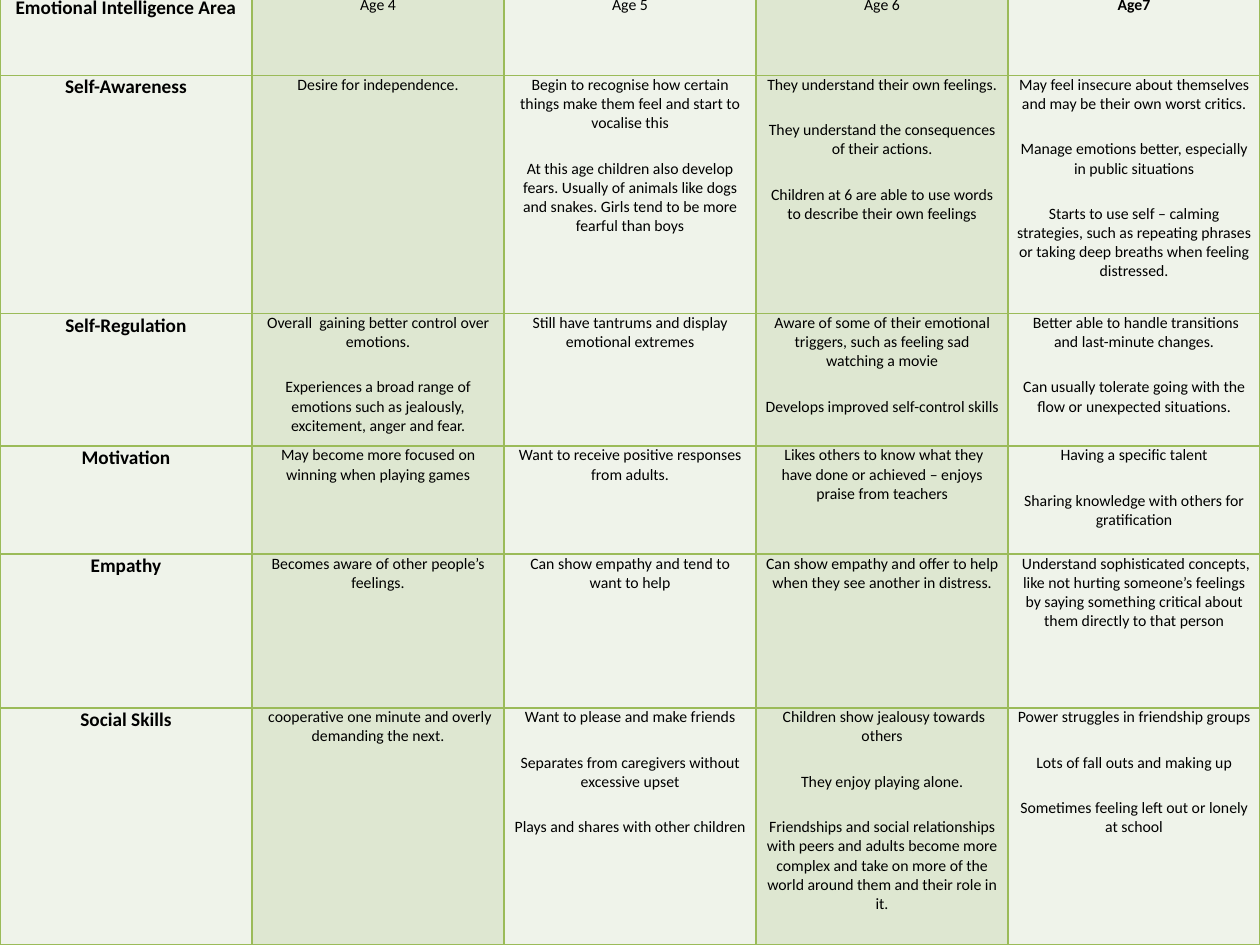
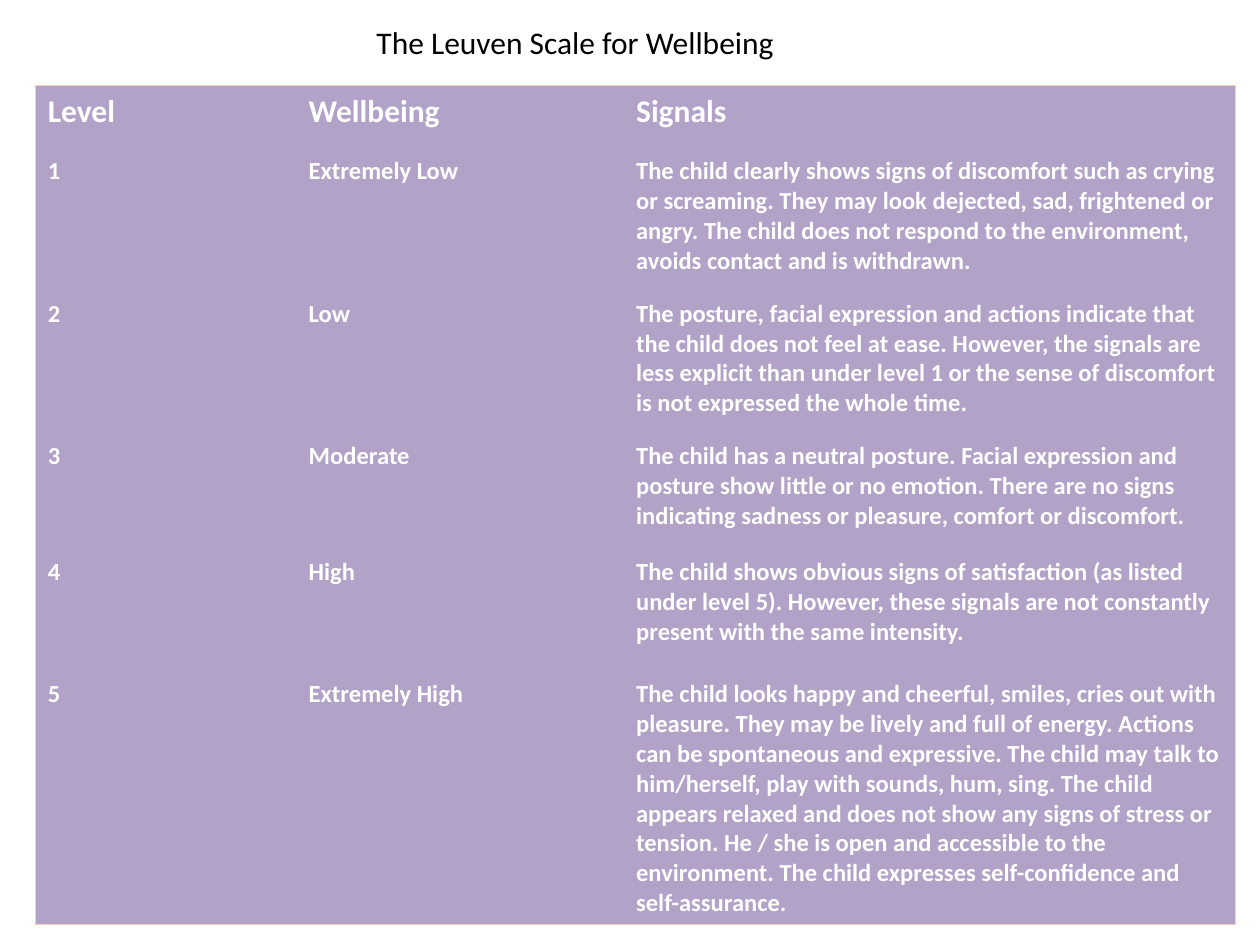
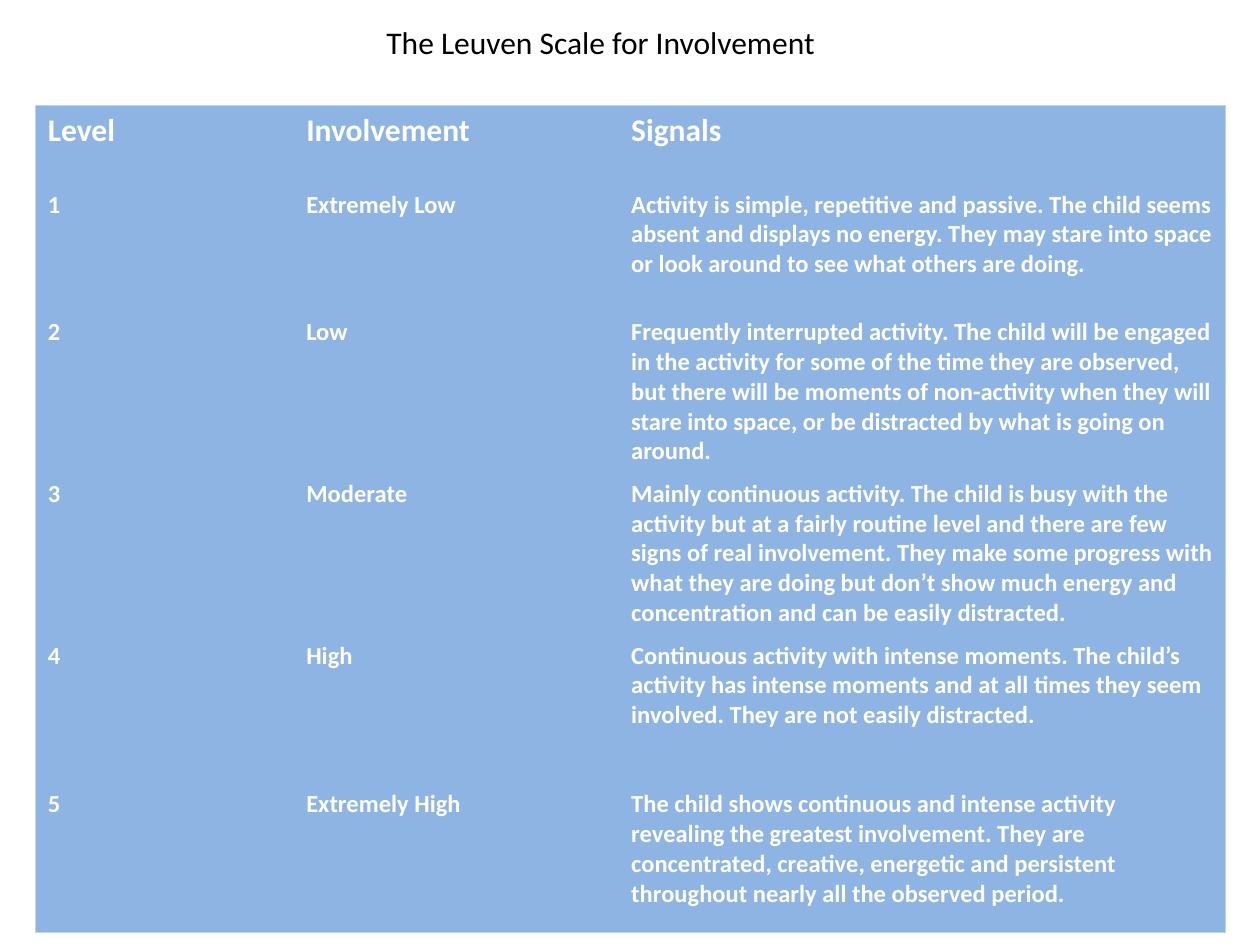
import pptx
import pptx.dml.color
import pptx.enum.text
import pptx.util
import lxml.etree
from pptx.oxml.ns import qn

Cm = pptx.util.Cm
Pt = pptx.util.Pt

COLORS = {
    "text": "000000",
    "white": "FFFFFF",
    "age_line": "9BBB59",
    "age_light": "EFF3EA",
    "age_dark": "DEE7D1",
    "wellbeing": "B3A2C7",
    "wellbeing_line": "F7CEBB",
    "involvement": "8EB4E3",
    "involvement_line": "BCD7E1",
}
FONT = "Calibri"
PLAIN_TABLE = "{2D5ABB26-0587-4C30-8999-92F81FD0307C}"
SIDES = ("lnL", "lnR", "lnT", "lnB")
LEVELS = ["Extremely Low", "Low", "Moderate", "High", "Extremely High"]

AGES = [
    [["Emotional Intelligence Area"], ["Age 4"], ["Age 5"], ["Age 6"], ["Age7"]],
    [
        ["Self-Awareness"],
        ["Desire for independence."],
        ["Begin to recognise how certain things make them feel and start to vocalise this",
         "At this age children also develop fears. Usually of animals like dogs and snakes. "
         "Girls tend to be more fearful than boys"],
        ["They understand their own feelings.",
         "They understand the consequences of their actions.",
         "Children at 6 are able to use words to describe their own feelings"],
        ["May feel insecure about themselves and may be their own worst critics.",
         "Manage emotions better, especially in public situations",
         "Starts to use self – calming strategies, such as repeating phrases or taking "
         "deep breaths when feeling distressed."],
    ],
    [
        ["Self-Regulation"],
        ["Overall  gaining better control over emotions.",
         "Experiences a broad range of emotions such as jealously, excitement, anger and fear."],
        ["Still have tantrums and display emotional extremes"],
        ["Aware of some of their emotional triggers, such as feeling sad watching a movie",
         "Develops improved self-control skills"],
        [" Better able to handle transitions and last-minute changes.",
         "Can usually tolerate going with the flow or unexpected situations."],
    ],
    [
        ["Motivation"],
        ["May become more focused on winning when playing games"],
        ["Want to receive positive responses from adults."],
        [" Likes others to know what they have done or achieved – enjoys praise from teachers"],
        ["Having a specific talent", "Sharing knowledge with others for gratification"],
    ],
    [
        ["Empathy"],
        ["Becomes aware of other people’s feelings."],
        ["Can show empathy and tend to want to help"],
        ["Can show empathy and offer to help when they see another in distress."],
        [" Understand sophisticated concepts, like not hurting someone’s feelings by saying "
         "something critical about them directly to that person"],
    ],
    [
        ["Social Skills"],
        [" cooperative one minute and overly demanding the next."],
        ["Want to please and make friends",
         "Separates from caregivers without excessive upset",
         "Plays and shares with other children"],
        [" Children show jealousy towards others",
         "They enjoy playing alone.",
         "Friendships and social relationships with peers and adults become more complex and "
         "take on more of the world around them and their role in it."],
        ["Power struggles in friendship groups",
         "Lots of fall outs and making up",
         "Sometimes feeling left out or lonely at school"],
    ],
]

WELLBEING = [
    "The child clearly shows signs of discomfort such as crying or screaming. They may look "
    "dejected, sad, frightened or angry. The child does not respond to the environment, avoids "
    "contact and is withdrawn.",
    "The posture, facial expression and actions indicate that the child does not feel at ease. "
    "However, the signals are less explicit than under level 1 or the sense of discomfort is not "
    "expressed the whole time.",
    "The child has a neutral posture. Facial expression and posture show little or no emotion. "
    "There are no signs indicating sadness or pleasure, comfort or discomfort.",
    "The child shows obvious signs of satisfaction (as listed under level 5). However, these "
    "signals are not constantly present with the same intensity.",
    "The child looks happy and cheerful, smiles, cries out with pleasure. They may be lively and "
    "full of energy. Actions can be spontaneous and expressive. The child may talk to "
    "him/herself, play with sounds, hum, sing. The child appears relaxed and does not show any "
    "signs of stress or tension. He / she is open and accessible to the environment. The child "
    "expresses self-confidence and self-assurance.",
]

INVOLVEMENT = [
    "Activity is simple, repetitive and passive. The child seems absent and displays no energy. "
    "They may stare into space or look around to see what others are doing.",
    "Frequently interrupted activity. The child will be engaged in the activity for some of the "
    "time they are observed, but there will be moments of non-activity when they will stare into "
    "space, or be distracted by what is going on around.",
    "Mainly continuous activity. The child is busy with the activity but at a fairly routine "
    "level and there are few signs of real involvement. They make some progress with what they "
    "are doing but don’t show much energy and concentration and can be easily distracted.",
    "Continuous activity with intense moments. The child’s activity has intense moments and at "
    "all times they seem involved. They are not easily distracted.",
    "The child shows continuous and intense activity revealing the greatest involvement. They "
    "are concentrated, creative, energetic and persistent throughout nearly all the observed "
    "period.",
]


def rgb(name):
    return pptx.dml.color.RGBColor.from_string(COLORS[name])


def style_paragraph(p, size, color, bold=False):
    p.font.name = FONT
    p.font.size = Pt(size)
    p.font.bold = bold
    p.font.color.rgb = rgb(color)


def add_grid(slide, left, top, cols, rows):
    frame = slide.shapes.add_table(len(rows), len(cols), Cm(left), Cm(top),
                                   Cm(sum(cols)), Cm(sum(rows)))
    table = frame.table
    table._tbl.tblPr.find(qn("a:tableStyleId")).text = PLAIN_TABLE
    table.first_row = table.horz_banding = False
    for column, width in zip(table.columns, cols):
        column.width = Cm(width)
    for row, height in zip(table.rows, rows):
        row.height = Cm(height)
    return table


def set_borders(cell, sides, color, width):
    tcPr = cell._tc.get_or_add_tcPr()
    for side in sides:
        ln = lxml.etree.SubElement(tcPr, qn(f"a:{side}"), w=str(Pt(width)))
        fill = lxml.etree.SubElement(ln, qn("a:solidFill"))
        lxml.etree.SubElement(fill, qn("a:srgbClr"), val=COLORS[color])


def fill_cell(cell, color):
    cell.fill.solid()
    cell.fill.fore_color.rgb = rgb(color)


def add_age_slide(prs):
    slide = prs.slides.add_slide(prs.slide_layouts[6])
    table = add_grid(slide, 0, -0.08, [5.08] * 5, [1.6, 4.8, 2.67, 2.18, 3.1, 4.78])
    for i, row in enumerate(AGES):
        for j, paragraphs in enumerate(row):
            cell = table.cell(i, j)
            cell.margin_left = cell.margin_right = Cm(0.18)
            cell.margin_top = cell.margin_bottom = 0
            set_borders(cell, SIDES, "age_line", 1)
            fill_cell(cell, "age_dark" if j % 2 else "age_light")
            cell.text = "\n".join(paragraphs)
            for p in cell.text_frame.paragraphs:
                p.alignment = pptx.enum.text.PP_ALIGN.CENTER
                p.space_after = Pt(15)
                style_paragraph(p, 9 if j else 11, "text", j == 0 or (i, j) == (0, 4))


def add_title(slide, text, left, width):
    title = slide.shapes.title
    title.left, title.top, title.width, title.height = Cm(left), Cm(0.33), Cm(width), Cm(1.02)
    tf = title.text_frame
    tf.text = text
    tf.auto_size = pptx.enum.text.MSO_AUTO_SIZE.NONE
    tf.vertical_anchor = pptx.enum.text.MSO_ANCHOR.TOP
    p = tf.paragraphs[0]
    p.alignment = pptx.enum.text.PP_ALIGN.CENTER
    style_paragraph(p, 18, "text")


def add_scale_slide(prs, name, signals, title_box, top, cols, rows):
    slide = prs.slides.add_slide(prs.slide_layouts[5])
    add_title(slide, f"The Leuven Scale for {name}", *title_box)
    table = add_grid(slide, 0.71, top, cols, rows)
    color = name.lower()
    content = [("Level", name, "Signals")]
    content += [(str(n), *pair) for n, pair in enumerate(zip(LEVELS, signals), 1)]
    for i, row in enumerate(content):
        for j, text in enumerate(row):
            cell = table.cell(i, j)
            on_edge = (j == 0, j == len(cols) - 1, i == 0, i == len(rows) - 1)
            edges = [side for side, outer in zip(SIDES, on_edge) if outer]
            set_borders(cell, edges, f"{color}_line", 0.75)
            fill_cell(cell, color)
            cell.text = text
            style_paragraph(cell.text_frame.paragraphs[0], 14 if i else 18, "white", True)


def main():
    prs = pptx.Presentation()
    prs.slide_width, prs.slide_height = Cm(25.4), Cm(19.05)
    add_age_slide(prs)
    add_scale_slide(prs, "Wellbeing", WELLBEING, (4.7, 13.79), 1.73,
                    [5.26, 6.6, 12.34], [1.3, 2.87, 2.87, 2.34, 2.46, 4.98])
    add_scale_slide(prs, "Involvement", INVOLVEMENT, (5.11, 14), 2.13,
                    [5.21, 6.55, 12.24], [1.57, 2.57, 2.41, 2.29, 3, 3])
    prs.save("out.pptx")


if __name__ == "__main__":
    main()
